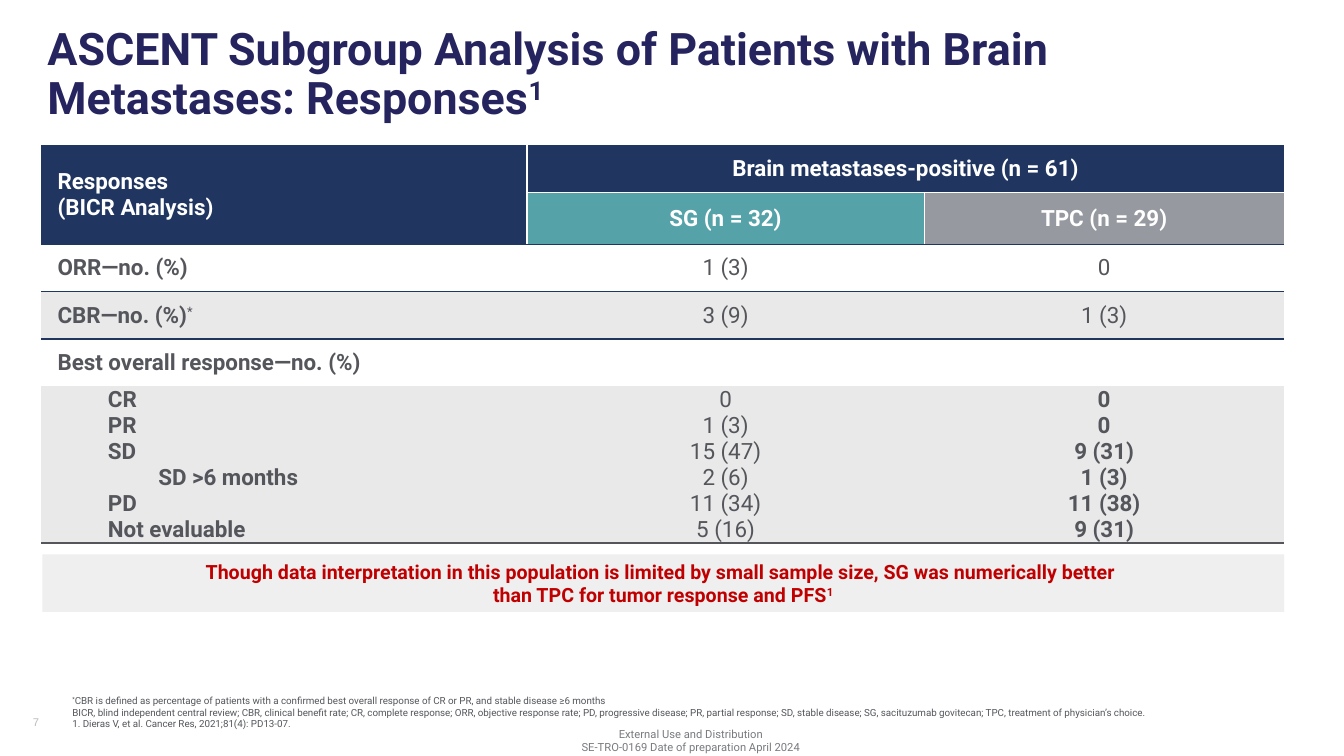
import pptx
import pptx.dml.color
import pptx.enum.shapes
import pptx.enum.text
import pptx.oxml
import pptx.oxml.ns
import pptx.util
from lxml import etree

Cm, Pt = pptx.util.Cm, pptx.util.Pt
RGBColor = pptx.dml.color.RGBColor
ALIGN = pptx.enum.text.PP_ALIGN
ANCHOR = pptx.enum.text.MSO_ANCHOR

INDIGO = RGBColor(0x26, 0x24, 0x5E)
NAVY = RGBColor(0x20, 0x36, 0x61)
TEAL = RGBColor(0x55, 0xA2, 0xA8)
GREY = RGBColor(0x96, 0x99, 0x9F)
BAND = RGBColor(0xE9, 0xE9, 0xEA)
PANEL = RGBColor(0xDC, 0xDD, 0xDF)
TEXT = RGBColor(0x54, 0x56, 0x5B)
FOOTER = RGBColor(0x78, 0x7A, 0x7E)
PAGE = RGBColor(0xB9, 0xBB, 0xBF)
RED = RGBColor(0xC0, 0x00, 0x00)
WHITE = RGBColor(0xFF, 0xFF, 0xFF)
NO_GRID_STYLE = "{2D5ABB26-0587-4C30-8999-92F81FD0307C}"


def sub(parent, tag, **attrs):
    return etree.SubElement(parent, pptx.oxml.ns.qn(tag), attrs)


class Deck:
    font = "Roboto"

    def __init__(self):
        self.prs = pptx.Presentation()
        self.prs.slide_width, self.prs.slide_height = Cm(33.87), Cm(19.05)
        self.s = self.prs.slides.add_slide(self.prs.slide_layouts[1])

    def set_text(self, tf, lines, size, color, bold=False, align=ALIGN.LEFT,
                 anchor=ANCHOR.MIDDLE, spacing=None, font=None, indents=()):
        """Fill a frame; ^ toggles superscript and \\v breaks a line."""
        tf.word_wrap = True
        tf.vertical_anchor = anchor
        for i, line in enumerate(lines):
            p = tf.paragraphs[0] if i == 0 else tf.add_paragraph()
            pPr = p._p.get_or_add_pPr()
            pPr.set("marL", str(Cm(indents[i] if indents else 0)))
            pPr.set("indent", "0")
            sub(pPr, "a:buNone")
            p.alignment = align
            p.space_before = Pt(0)
            if spacing:
                p.line_spacing = spacing
            p.font.name, p.font.size = font or self.font, Pt(size)
            p.font.bold, p.font.color.rgb = bold, color
            for j, part in enumerate(line.split("^")):
                for k, text in enumerate(part.split("\v")):
                    if k:
                        p.add_line_break()
                    if not text:
                        continue
                    r = p.add_run()
                    r.text = text
                    if j % 2:
                        r._r.get_or_add_rPr().set("baseline", "30000")
                    if text == "*":
                        r.font.bold = False

    def placeholder(self, index, x, y, w, h, lines, **style):
        sp = self.s.placeholders[index]
        sp.left, sp.top, sp.width, sp.height = Cm(x), Cm(y), Cm(w), Cm(h)
        sp.text_frame.auto_size = pptx.enum.text.MSO_AUTO_SIZE.NONE
        self.set_text(sp.text_frame, lines, **style)

    def textbox(self, x, y, w, h, lines, **style):
        sp = self.s.shapes.add_textbox(Cm(x), Cm(y), Cm(w), Cm(h))
        self.set_text(sp.text_frame, lines, **style)

    def panel(self, x, y, w, h, lines, fill, opacity, **style):
        sp = self.s.shapes.add_shape(pptx.enum.shapes.MSO_SHAPE.RECTANGLE,
                                     Cm(x), Cm(y), Cm(w), Cm(h))
        sp.shadow.inherit = False
        sp.line.fill.background()
        sp.fill.solid()
        sp.fill.fore_color.rgb = fill
        color = sp._element.spPr.find(".//" + pptx.oxml.ns.qn("a:srgbClr"))
        sub(color, "a:alpha", val=str(opacity * 1000))
        self.set_text(sp.text_frame, lines, **style)

    def table(self, x, y, widths, heights):
        """Add an unstyled grid and return its table."""
        frame = self.s.shapes.add_table(len(heights), len(widths), Cm(x), Cm(y),
                                        Cm(sum(widths)), Cm(sum(heights)))
        table = frame.table
        table.first_row = table.horz_banding = False
        frame._element.find(".//" + pptx.oxml.ns.qn("a:tableStyleId")).text = NO_GRID_STYLE
        for col, w in zip(table.columns, widths):
            col.width = Cm(w)
        for row, h in zip(table.rows, heights):
            row.height = Cm(h)
        return table

    def cell(self, cell, lines, fill, borders, **style):
        """Borders map a side (L, R, T, B) to a colour and a width in points."""
        cell.margin_left = cell.margin_right = Cm(0.41)
        cell.margin_top = cell.margin_bottom = 0
        cell.vertical_anchor = ANCHOR.MIDDLE
        tcPr = cell._tc.get_or_add_tcPr()
        for side in "LRTB":
            if side in borders:
                color, width = borders[side]
                ln = sub(tcPr, "a:ln" + side, w=str(Pt(width)))
                sub(sub(ln, "a:solidFill"), "a:srgbClr", val=str(color))
        cell.fill.solid()
        cell.fill.fore_color.rgb = fill
        self.set_text(cell.text_frame, lines, size=16, **style)


ROWS = [
    [["Responses \v(BICR Analysis)"], ["Brain metastases-positive (n = 61)"], []],
    [[], ["SG (n = 32)"], ["TPC (n = 29)"]],
    [["ORR—no. (%)"], ["1 (3)"], ["0"]],
    [["CBR—no. (%)^*"], ["3 (9)"], ["1 (3)"]],
    [["Best overall response—no. (%)"], [], []],
    [["CR", "PR", "SD", "SD >6 months", "PD", "Not evaluable"],
     ["0", "1 (3)", "15 (47)", "2 (6)", "11 (34)", "5 (16)"],
     ["0", "0", "9 (31)", "1 (3)", "11 (38)", "9 (31)"]],
]
HEADER_FILLS = [[NAVY] * 3, [NAVY, TEAL, GREY]]
RESPONSE_INDENTS = [1.27, 1.27, 1.27, 2.54, 1.27, 1.27]


def cell_borders(row, col):
    navy, white = (NAVY, 1), (WHITE, 1)
    borders = {}
    if row < 2:
        if col:
            borders["L"] = white
        if col == 0 or (row, col) == (1, 1):
            borders["R"] = white
    if row == 0:
        borders["T"] = navy
        if col:
            borders["B"] = white
    if row == 1 and col:
        borders["T"] = white
    if row in (1, 2):
        borders["B"] = navy
    if row in (2, 3):
        borders["T"] = navy
    if row == 5:
        borders["B"] = (TEXT, 2)
    return borders


def add_responses(deck):
    table = deck.table(1.04, 3.66, [12.24, 10.01, 9.07],
                       [1.19, 1.31, 1.19, 1.19, 1.19, 3.95])
    table.cell(0, 0).merge(table.cell(1, 0))
    table.cell(0, 1).merge(table.cell(0, 2))
    for row, texts in enumerate(ROWS):
        header, last = row < 2, row == len(ROWS) - 1
        for col, lines in enumerate(texts):
            fill = HEADER_FILLS[row][col] if header else BAND if row % 2 else WHITE
            deck.cell(table.cell(row, col), lines, fill, cell_borders(row, col),
                      color=WHITE if header else TEXT,
                      bold=header or col == 0 or (last and col == 2),
                      align=ALIGN.CENTER if col else ALIGN.LEFT,
                      indents=RESPONSE_INDENTS if last and col == 0 else ())


def main():
    deck = Deck()
    deck.placeholder(0, 0.94, 0.56, 31.9, 2.54,
                     ["ASCENT Subgroup Analysis of Patients with Brain Metastases: Responses^1"],
                     size=32, color=INDIGO, bold=True, anchor=ANCHOR.TOP, spacing=0.9)
    deck.placeholder(1, 1.57, 16.56, 29.97, 1.96, [
        "^*^CBR is defined as percentage of patients with a confirmed best overall response "
        "of CR or PR, and stable disease ≥6 months",
        "BICR, blind independent central review; CBR, clinical benefit rate; CR, complete response; "
        "ORR, objective response rate; PD, progressive disease; PR, partial response; "
        "SD, stable disease; SG, sacituzumab govitecan; TPC, treatment of physician’s choice."
        "\v1. Dieras V, et al. Cancer Res, 2021;81(4): PD13-07."],
        size=7, color=TEXT, anchor=ANCHOR.BOTTOM)
    add_responses(deck)
    deck.panel(1.07, 13.97, 31.29, 1.45, [
        "Though data interpretation in this population is limited by small sample size, "
        "SG was numerically better \vthan TPC for tumor response and PFS^1"],
        PANEL, 45, size=14, color=RED, bold=True, align=ALIGN.CENTER)
    deck.textbox(13.06, 18.26, 8.71, 0.81,
                 ["External Use and Distribution", "SE-TRO-0169 Date of preparation April 2024"],
                 size=8, color=FOOTER, align=ALIGN.CENTER)
    deck.textbox(0.58, 17.78, 7.62, 0.81, ["7"], size=8, color=PAGE, font="Arial")
    deck.prs.save("out.pptx")


if __name__ == "__main__":
    main()
